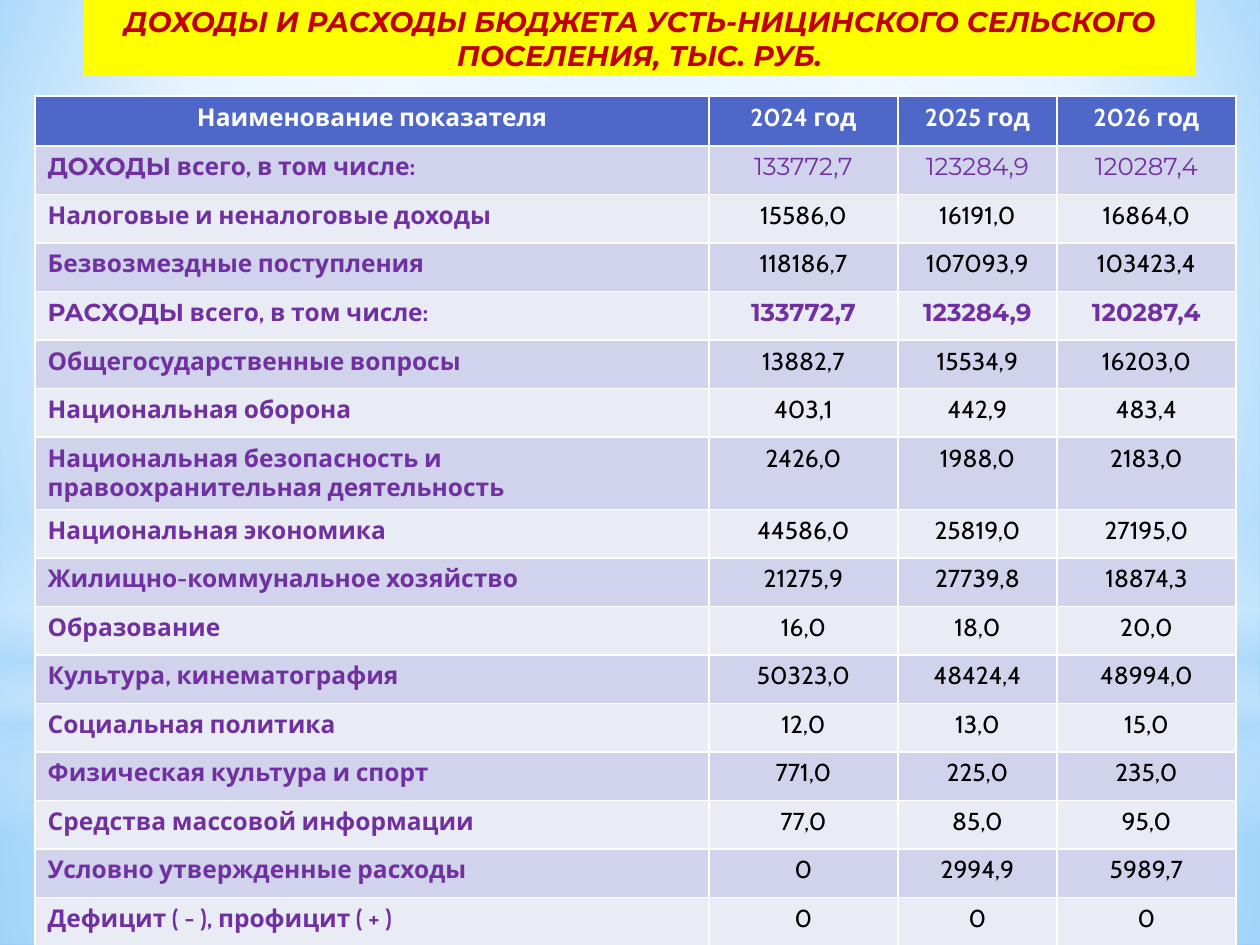
from lxml import etree
from pptx import Presentation
from pptx import util as u
from pptx.dml.color import RGBColor
from pptx.enum import shapes, text
from pptx.oxml.ns import qn

PX = 914400 // 126
WHITE, HAZE, PURPLE, BLACK = "FFFFFF", "B4DCFA", "7030A0", "000000"
HEADER_FILL, BANDS = "4E67C8", ("D0D3EB", "E9EBF5")

HEADING = "ДОХОДЫ И РАСХОДЫ БЮДЖЕТА УСТЬ-НИЦИНСКОГО СЕЛЬСКОГО ПОСЕЛЕНИЯ, ТЫС. РУБ."
HEADER = ("Наименование показателя", "2024 год", "2025 год", "2026 год")
BUDGET = [
    ("ДОХОДЫ всего, в том числе:", "133772,7", "123284,9", "120287,4"),
    ("Налоговые и неналоговые доходы", "15586,0", "16191,0", "16864,0"),
    ("Безвозмездные поступления", "118186,7", "107093,9", "103423,4"),
    ("РАСХОДЫ всего, в том числе:", "133772,7", "123284,9", "120287,4"),
    ("Общегосударственные вопросы", "13882,7", "15534,9", "16203,0"),
    ("Национальная оборона", "403,1", "442,9", "483,4"),
    ("Национальная безопасность и правоохранительная деятельность", "2426,0", "1988,0", "2183,0"),
    ("Национальная экономика", "44586,0", "25819,0", "27195,0"),
    ("Жилищно-коммунальное хозяйство", "21275,9", "27739,8", "18874,3"),
    ("Образование", "16,0", "18,0", "20,0"),
    ("Культура, кинематография", "50323,0", "48424,4", "48994,0"),
    ("Социальная политика", "12,0", "13,0", "15,0"),
    ("Физическая культура и спорт", "771,0", "225,0", "235,0"),
    ("Средства массовой информации", "77,0", "85,0", "95,0"),
    ("Условно утвержденные расходы", "0", "2994,9", "5989,7"),
    ("Дефицит ( - ), профицит ( + )", "0", "0", "0"),
]
TOTALS_BOLD = {"ДОХОДЫ": False, "РАСХОДЫ": True}
COLUMN_WIDTHS = (674, 189, 159, 179)
TABLE_BOX = (35, 96, 1201, 850)
HEADER_HEIGHT, TWO_LINE_ROW, TWO_LINE_HEIGHT = 50, 7, 72

CENTER = (50, 50, 50, 50)
SKY = [(0, "9ED5FF", 100), (60, WHITE, 100), (100, "5BB9FF", 100)]
RECT, OVAL = shapes.MSO_SHAPE.RECTANGLE, shapes.MSO_SHAPE.OVAL
CLOUDS = [
    (RECT, (0, 703, 1260, 242), [(0, WHITE, 91), (37, WHITE, 76), (100, HAZE, 79)], CENTER),
    (RECT, (0, 0, 1260, 703), [(0, WHITE, 89), (48, WHITE, 62), (100, HAZE, 79)], CENTER),
    (RECT, (0, 519, 1260, 315), [(0, WHITE, 0), (29, WHITE, 30), (45, HAZE, 40),
                                 (55, WHITE, 26), (65, HAZE, 60), (100, WHITE, 0)], None),
    (OVAL, (0, 221, 1260, 703), [(0, WHITE, 100), (56, WHITE, 0)], CENTER),
]


def px(*lengths):
    return [round(length * PX) for length in lengths]


def rgb(color):
    return RGBColor.from_string(color)


def apply_gradient(fill, owner, stops, focus):
    fill.gradient()
    gradient = next(owner.iter(qn("a:gradFill")))
    for child in list(gradient):
        gradient.remove(child)
    stop_list = etree.SubElement(gradient, qn("a:gsLst"))
    for position, color, opacity in stops:
        stop = etree.SubElement(stop_list, qn("a:gs"), pos=str(position * 1000))
        tint = etree.SubElement(stop, qn("a:srgbClr"), val=color)
        if opacity < 100:
            etree.SubElement(tint, qn("a:alpha"), val=str(opacity * 1000))
    if focus:
        radial = etree.SubElement(gradient, qn("a:path"), {"path": "circle"})
        sides = {side: str(share * 1000) for side, share in zip("ltrb", focus)}
        etree.SubElement(radial, qn("a:fillToRect"), sides)
    else:
        etree.SubElement(gradient, qn("a:lin"), ang="5400000", scaled="0")


def write(paragraph, words, color, **formats):
    run = paragraph.add_run()
    run.text = words
    run.font.color.rgb = rgb(color)
    for attribute, value in formats.items():
        setattr(run.font, attribute, value)


def fill_cell(cell, color, runs, align):
    cell.fill.solid()
    cell.fill.fore_color.rgb = rgb(color)
    paragraph = cell.text_frame.paragraphs[0]
    paragraph.alignment = align
    for words, ink, face, bold in runs:
        write(paragraph, words, ink, name=face, bold=bold, size=u.Pt(14))


def add_budget(slide):
    left, top, width, height = TABLE_BOX
    budget = slide.shapes.add_table(len(BUDGET) + 1, len(HEADER), *px(*TABLE_BOX)).table
    for column, column_width in zip(budget.columns, px(*COLUMN_WIDTHS)):
        column.width = column_width
    plain_height = (height - HEADER_HEIGHT - TWO_LINE_HEIGHT) / (len(BUDGET) - 1)
    special_heights = {0: HEADER_HEIGHT, TWO_LINE_ROW: TWO_LINE_HEIGHT}
    for index, row in enumerate(budget.rows):
        row.height = px(special_heights.get(index, plain_height))[0]

    left_align, center = text.PP_ALIGN.LEFT, text.PP_ALIGN.CENTER
    for column, label in enumerate(HEADER):
        fill_cell(budget.cell(0, column), HEADER_FILL, [(label, WHITE, "Cabin", True)], center)
    for index, (indicator, *amounts) in enumerate(BUDGET):
        band = BANDS[index % 2]
        first, space, rest = indicator.partition(" ")
        if first in TOTALS_BOLD:
            names = [(first, PURPLE, "Montserrat", True), (space + rest, PURPLE, "Cabin", True)]
            style = (PURPLE, "Montserrat", TOTALS_BOLD[first])
        else:
            names = [(indicator, PURPLE, "Cabin", True)]
            style = (BLACK, "Cabin", False)
        fill_cell(budget.cell(index + 1, 0), band, names, left_align)
        for column, amount in enumerate(amounts, 1):
            fill_cell(budget.cell(index + 1, column), band, [(amount, *style)], center)


def main():
    deck = Presentation()
    deck.slide_width, deck.slide_height = px(1260, 945)
    slide = deck.slides.add_slide(deck.slide_layouts[5])
    apply_gradient(slide.background.fill, slide.element, SKY, (20, 10, 20, 60))
    for kind, box, stops, focus in CLOUDS:
        cloud = slide.shapes.add_shape(kind, *px(*box))
        cloud.shadow.inherit = False
        cloud.line.fill.background()
        apply_gradient(cloud.fill, cloud.element, stops, focus)

    heading = slide.shapes.title
    heading.element.getparent().append(heading.element)
    heading.left, heading.top, heading.width, heading.height = px(84, 0, 1111, 76)
    heading.fill.solid()
    heading.fill.fore_color.rgb = rgb("FFFF00")
    frame = heading.text_frame
    frame.auto_size = text.MSO_AUTO_SIZE.NONE
    frame.vertical_anchor = text.MSO_ANCHOR.MIDDLE
    frame.paragraphs[0].alignment = text.PP_ALIGN.CENTER
    write(frame.paragraphs[0], HEADING, "C00000", name="Montserrat",
          size=u.Pt(16.2), bold=True, italic=True)

    add_budget(slide)
    deck.save("out.pptx")


if __name__ == "__main__":
    main()
